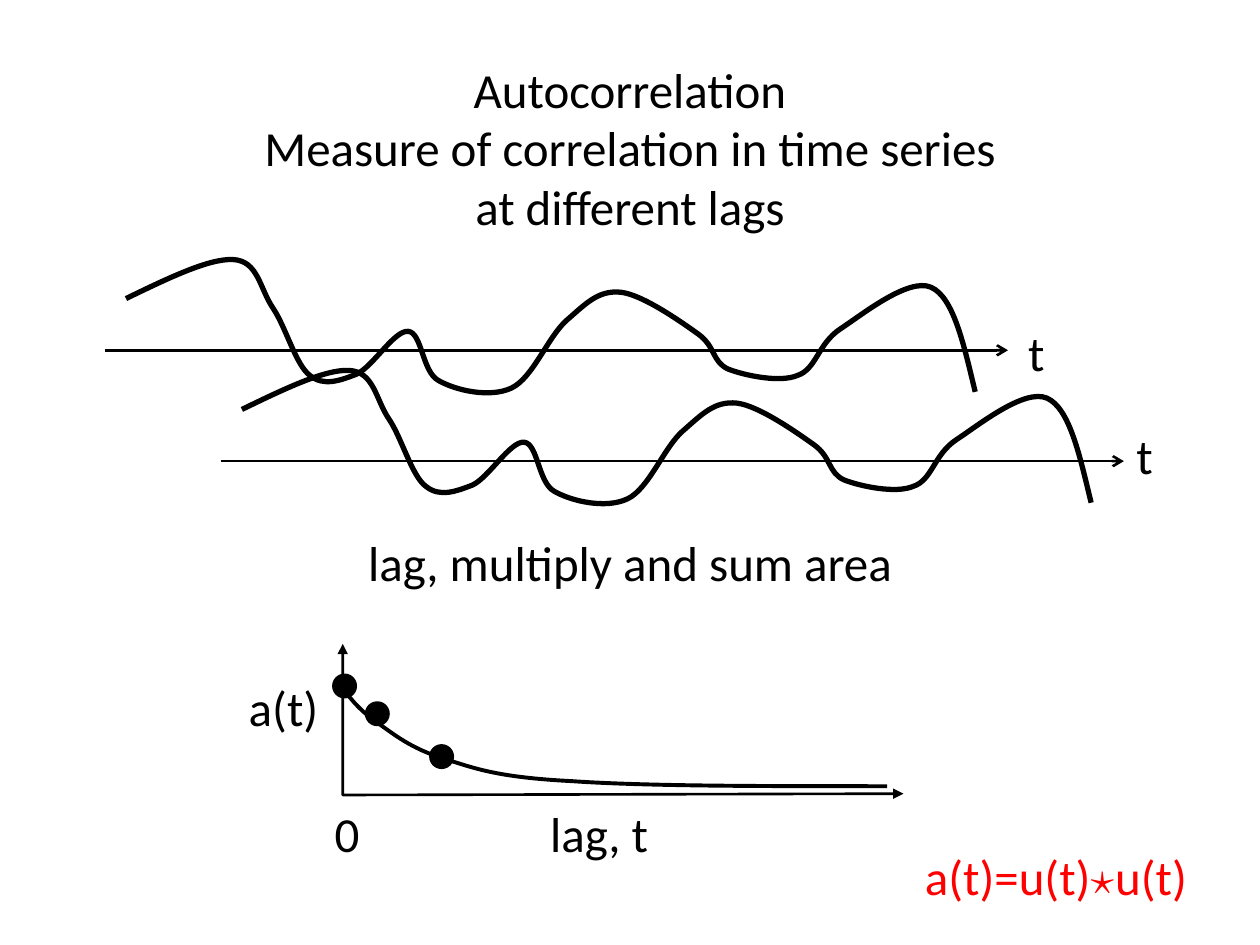
from lxml.etree import SubElement
from pptx import Presentation
from pptx.dml.color import RGBColor
from pptx.enum.shapes import MSO_CONNECTOR as Connector, MSO_SHAPE as Shape
from pptx.enum.text import MSO_AUTO_SIZE as AutoSize, PP_ALIGN as Align
from pptx.oxml.ns import qn
from pptx.util import Inches, Pt

THEME = {
    "ink": RGBColor(0, 0, 0), "accent": RGBColor(255, 0, 0),
    "font": "Calibri", "symbol_font": "Times New Roman", "size": Pt(28),
    "axis": Pt(1.5), "dot": Pt(2), "decay": Pt(2.25), "wave": Pt(3),
}

LABELS = [
    (0, 0.42, 10, 1.51, ["Autocorrelation", "Measure of correlation in time series",
                         "at different lags"]),
    (7.89, 2.51, 0.67, 0.57, ["t"]),
    (8.75, 3.33, 0.67, 0.57, ["t"]),
    (0, 4.18, 10, 0.57, ["lag, multiply and sum area"]),
    (1.75, 5.33, 1, 0.57, ["a(t)"]),
    (2.42, 6.33, 0.67, 0.57, ["0"]),
    (3.42, 6.33, 2.67, 0.57, ["lag, t"]),
]
FORMULA_BOX = (7.17, 6.67, 2.42, 0.57)
FORMULA = [("a(t)=u(t)", "font"), ("⋆", "symbol_font"), ("u(t)", "font")]

WAVE = [
    (1, 2.37),
    (1.33, 2.21), (1.66, 2.05), (1.85, 2.06),
    (2.05, 2.07), (2.06, 2.29), (2.17, 2.45),
    (2.27, 2.6), (2.35, 2.9), (2.46, 2.98),
    (2.57, 3.07), (2.7, 3.02), (2.83, 2.97),
    (2.96, 2.91), (3.13, 2.62), (3.24, 2.63),
    (3.35, 2.64), (3.35, 2.95), (3.48, 3.02),
    (3.62, 3.1), (3.89, 3.16), (4.06, 3.08),
    (4.23, 3), (4.35, 2.67), (4.5, 2.54),
    (4.65, 2.41), (4.75, 2.3), (4.93, 2.32),
    (5.1, 2.34), (5.4, 2.55), (5.54, 2.65),
    (5.68, 2.75), (5.65, 2.87), (5.78, 2.93),
    (5.91, 2.98), (6.19, 3.04), (6.33, 2.98),
    (6.48, 2.93), (6.49, 2.73), (6.67, 2.61),
    (6.84, 2.5), (7.21, 2.2), (7.39, 2.28),
    (7.57, 2.36), (7.65, 2.74), (7.74, 3.11),
]
TIME_AXIS = [(0.83, 2.78), (8, 2.78)]
LAGS = [(0, 0), (0.92, 0.88)]

LAG_AXES = [(2.72, 5.11), (2.72, 6.31), (7.17, 6.3)]
DECAY = [
    (2.72, 5.46),
    (2.79, 5.56), (2.87, 5.65), (3, 5.74),
    (3.13, 5.83), (3.26, 5.94), (3.52, 6.02),
    (3.77, 6.1), (3.95, 6.17), (4.54, 6.2),
    (5.12, 6.24), (6.08, 6.24), (7.04, 6.24),
]
DOTS = [(2.65, 5.36), (2.91, 5.58), (3.42, 5.92)]
DOT_SIZE = 0.17


def shift(points, lag):
    return [(x + lag[0], y + lag[1]) for x, y in points]


def ink_line(shape, weight, **arrowheads):
    shape.line.color.rgb = THEME["ink"]
    shape.line.width = THEME[weight]
    outline = shape.line._get_or_add_ln()
    for end, kind in arrowheads.items():
        SubElement(outline, qn(f"a:{end}End"), type=kind)


def add_path(shapes, points, weight, **arrowheads):
    start, *others = [(Inches(x), Inches(y)) for x, y in points]
    builder = shapes.build_freeform(*start)
    builder.add_line_segments(others, close=False)
    shape = builder.convert_to_shape()
    shape.shadow.inherit = False
    shape.fill.background()
    ink_line(shape, weight, **arrowheads)
    return shape


def add_curve(shapes, points, weight):
    shape = add_path(shapes, points, weight)
    outline = next(shape._element.iter(qn("a:path")))
    corners = outline.findall(qn("a:lnTo"))
    for start in range(0, len(corners), 3):
        bezier = SubElement(outline, qn("a:cubicBezTo"))
        for corner in corners[start:start + 3]:
            bezier.append(corner[0])
            outline.remove(corner)


def add_time_series(page, lag):
    group = page.shapes.add_group_shape()
    ends = [Inches(value) for point in shift(TIME_AXIS, lag) for value in point]
    axis = group.shapes.add_connector(Connector.STRAIGHT, *ends)
    ink_line(axis, "axis", tail="arrow")
    SubElement(axis._element.spPr, qn("a:effectLst"))
    add_curve(group.shapes, shift(WAVE, lag), "wave")


def add_dot(page, left, top):
    dot = page.shapes.add_shape(Shape.OVAL, *map(Inches, (left, top, DOT_SIZE, DOT_SIZE)))
    dot.shadow.inherit = False
    dot.fill.solid()
    dot.fill.fore_color.rgb = THEME["ink"]
    ink_line(dot, "dot")


def style_span(span, color, font="font"):
    span.font.name = THEME[font]
    span.font.size = THEME["size"]
    span.font.color.rgb = THEME[color]


def add_text_frame(page, *place):
    frame = page.shapes.add_textbox(*map(Inches, place)).text_frame
    frame.word_wrap = True
    frame.auto_size = AutoSize.SHAPE_TO_FIT_TEXT
    return frame


def add_label(page, left, top, width, height, lines):
    frame = add_text_frame(page, left, top, width, height)
    frame.text = "\n".join(lines)
    for para in frame.paragraphs:
        para.alignment = Align.CENTER
        style_span(para.runs[0], "ink")


def add_formula(page):
    para = add_text_frame(page, *FORMULA_BOX).paragraphs[0]
    para.alignment = Align.CENTER
    for text, font in FORMULA:
        span = para.add_run()
        span.text = text
        style_span(span, "accent", font)


def main():
    deck = Presentation()
    deck.slide_width, deck.slide_height = Inches(10), Inches(7.5)
    page = deck.slides.add_slide(deck.slide_layouts[6])
    for lag in LAGS:
        add_time_series(page, lag)
    add_path(page.shapes, LAG_AXES, "axis", head="triangle", tail="triangle")
    for label in LABELS:
        add_label(page, *label)
    for left, top in DOTS:
        add_dot(page, left, top)
    add_curve(page.shapes, DECAY, "decay")
    add_formula(page)
    deck.save("out.pptx")


if __name__ == "__main__":
    main()
